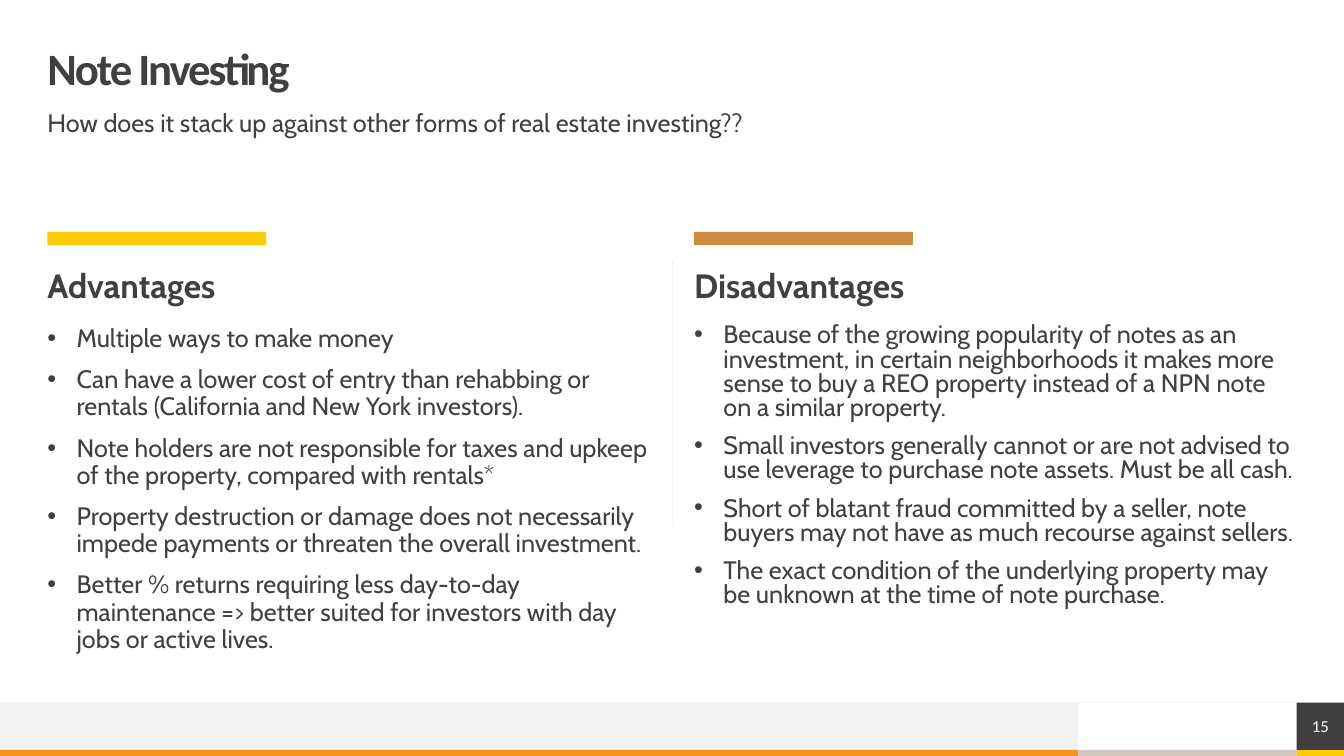
from lxml import etree
from pptx import Presentation
from pptx.dml.color import RGBColor
from pptx.enum.shapes import MSO_CONNECTOR, MSO_SHAPE
from pptx.enum.text import MSO_ANCHOR, PP_ALIGN
from pptx.oxml.ns import qn
from pptx.util import Inches, Pt

RECTANGLE = MSO_SHAPE.RECTANGLE
STRAIGHT = MSO_CONNECTOR.STRAIGHT
TOP, MIDDLE = MSO_ANCHOR.TOP, MSO_ANCHOR.MIDDLE
LEFT, CENTER = PP_ALIGN.LEFT, PP_ALIGN.CENTER

INK = RGBColor(0x40, 0x40, 0x40)
WHITE = RGBColor(0xFF, 0xFF, 0xFF)
PALE = RGBColor(0xF2, 0xF2, 0xF2)
YELLOW = RGBColor(0xFF, 0xCA, 0x08)
ORANGE = RGBColor(0xF8, 0x93, 0x1D)
BRONZE = RGBColor(0xCE, 0x8D, 0x3E)
TAUPE = RGBColor(0xD2, 0xC6, 0xC1)

TITLE = "Note Investing"
SUBTITLE = "How does it stack up against other forms of real estate investing??"
PAGE_NUMBER = "15"
COLUMNS = [
    {
        "heading": "Advantages",
        "accent": YELLOW,
        "list_top": 3.23,
        "list_height": 3.56,
        "line_spacing": 0.9,
        "points": [
            "Multiple ways to make money",
            "Can have a lower cost of entry than rehabbing or rentals "
            "(California and New York investors).",
            "Note holders are not responsible for taxes and upkeep of the "
            "property, compared with rentals*",
            "Property destruction or damage does not necessarily impede "
            "payments or threaten the overall investment.",
            "Better % returns requiring less day-to-day maintenance => better "
            "suited for investors with day jobs or active lives.",
        ],
    },
    {
        "heading": "Disadvantages",
        "accent": BRONZE,
        "list_top": 3.22,
        "list_height": 3.19,
        "line_spacing": 0.8,
        "points": [
            "Because of the growing popularity of notes as an investment, in "
            "certain neighborhoods it makes more sense to buy a REO property "
            "instead of a NPN note on a similar property.",
            "Small investors generally cannot or are not advised to use "
            "leverage to purchase note assets. Must be all cash.",
            "Short of blatant fraud committed by a seller, note buyers may "
            "not have as much recourse against sellers.",
            "The exact condition of the underlying property may be unknown "
            "at the time of note purchase.",
        ],
    },
]

SLIDE_W, SLIDE_H = 13.33, 7.5
MARGIN = 0.47
GUTTER = 0.44
CONTENT_W = SLIDE_W - 2 * MARGIN
COLUMN_W = (CONTENT_W - GUTTER) / 2
ACCENT_W = 2.17
STRIPE_H = 0.06
STRIPE_TOP = SLIDE_H - STRIPE_H
FOOTER_TOP = STRIPE_TOP - MARGIN
NUMBER_LEFT = SLIDE_W - MARGIN
TAUPE_LEFT = NUMBER_LEFT - ACCENT_W
INDENT = 0.29


def add_block(slide, left, top, width, height, color):
    block = slide.shapes.add_shape(
        RECTANGLE, Inches(left), Inches(top), Inches(width), Inches(height))
    block.shadow.inherit = False
    block.fill.solid()
    block.fill.fore_color.rgb = color
    block.line.fill.background()
    return block


def add_rule(slide, x1, y1, x2, y2):
    rule = slide.shapes.add_connector(
        STRAIGHT, Inches(x1), Inches(y1), Inches(x2), Inches(y2))
    rule.line.color.rgb = PALE
    rule.line.width = Pt(0.5)
    etree.SubElement(rule._element.spPr, qn("a:effectLst"))


def write(shape, paragraphs, size, font="Cabin", color=INK, bold=False,
          spacing=0.9, anchor=TOP, align=LEFT, bullets=False, tracking=None):
    frame = shape.text_frame
    frame.word_wrap = True
    frame.vertical_anchor = anchor
    frame.margin_left = frame.margin_right = 0
    frame.margin_top = frame.margin_bottom = 0
    for index, text in enumerate(paragraphs):
        paragraph = frame.add_paragraph() if index else frame.paragraphs[0]
        paragraph.alignment = align
        paragraph.line_spacing = spacing
        if index:
            paragraph.space_before = Pt(10)
        if bullets:
            properties = paragraph._p.get_or_add_pPr()
            properties.set("marL", str(Inches(INDENT)))
            properties.set("indent", str(-Inches(INDENT)))
            etree.SubElement(properties, qn("a:buFont")).set("typeface", "Arial")
            etree.SubElement(properties, qn("a:buChar")).set("char", "•")
        run = paragraph.add_run()
        run.text = text
        run.font.name = font
        run.font.size = Pt(size)
        run.font.bold = bold
        run.font.color.rgb = color
        if tracking is not None:
            run.font._element.set("spc", str(int(tracking * 100)))


def add_text(slide, left, top, width, height, paragraphs, size, **style):
    box = slide.shapes.add_textbox(
        Inches(left), Inches(top), Inches(width), Inches(height))
    write(box, paragraphs, size, **style)


def add_footer(slide):
    add_block(slide, TAUPE_LEFT, STRIPE_TOP, ACCENT_W, STRIPE_H, TAUPE)
    add_block(slide, 0, FOOTER_TOP, TAUPE_LEFT, MARGIN, PALE)
    add_block(slide, 0, STRIPE_TOP, TAUPE_LEFT, STRIPE_H, ORANGE)
    add_block(slide, NUMBER_LEFT, STRIPE_TOP, MARGIN, STRIPE_H, YELLOW)
    add_rule(slide, SLIDE_W, FOOTER_TOP, 0, FOOTER_TOP)
    number = add_block(slide, NUMBER_LEFT, FOOTER_TOP, MARGIN, MARGIN, INK)
    write(number, [PAGE_NUMBER], 12, font="Calibri", color=WHITE,
          spacing=1.0, anchor=MIDDLE, align=CENTER)


def add_column(slide, left, column):
    add_block(slide, left, 2.3, ACCENT_W, 0.13, column["accent"])
    add_text(slide, left, 2.67, COLUMN_W, 0.39, [column["heading"]], 24, bold=True)
    add_text(slide, left, column["list_top"], COLUMN_W, column["list_height"],
             column["points"], 18, spacing=column["line_spacing"], bullets=True)


def main():
    deck = Presentation()
    deck.slide_width, deck.slide_height = Inches(SLIDE_W), Inches(SLIDE_H)
    slide = deck.slides.add_slide(deck.slide_layouts[6])
    add_footer(slide)
    add_text(slide, MARGIN, 0.47, CONTENT_W, 0.47, [TITLE], 32, font="Calibri",
             bold=True, anchor=MIDDLE, tracking=-1.5)
    add_text(slide, MARGIN, 1.1, CONTENT_W, 0.39, [SUBTITLE], 18)
    for index, column in enumerate(COLUMNS):
        add_column(slide, MARGIN + index * (COLUMN_W + GUTTER), column)
    add_rule(slide, SLIDE_W / 2, 2.58, SLIDE_W / 2, 5.22)
    deck.save("out.pptx")


if __name__ == "__main__":
    main()
